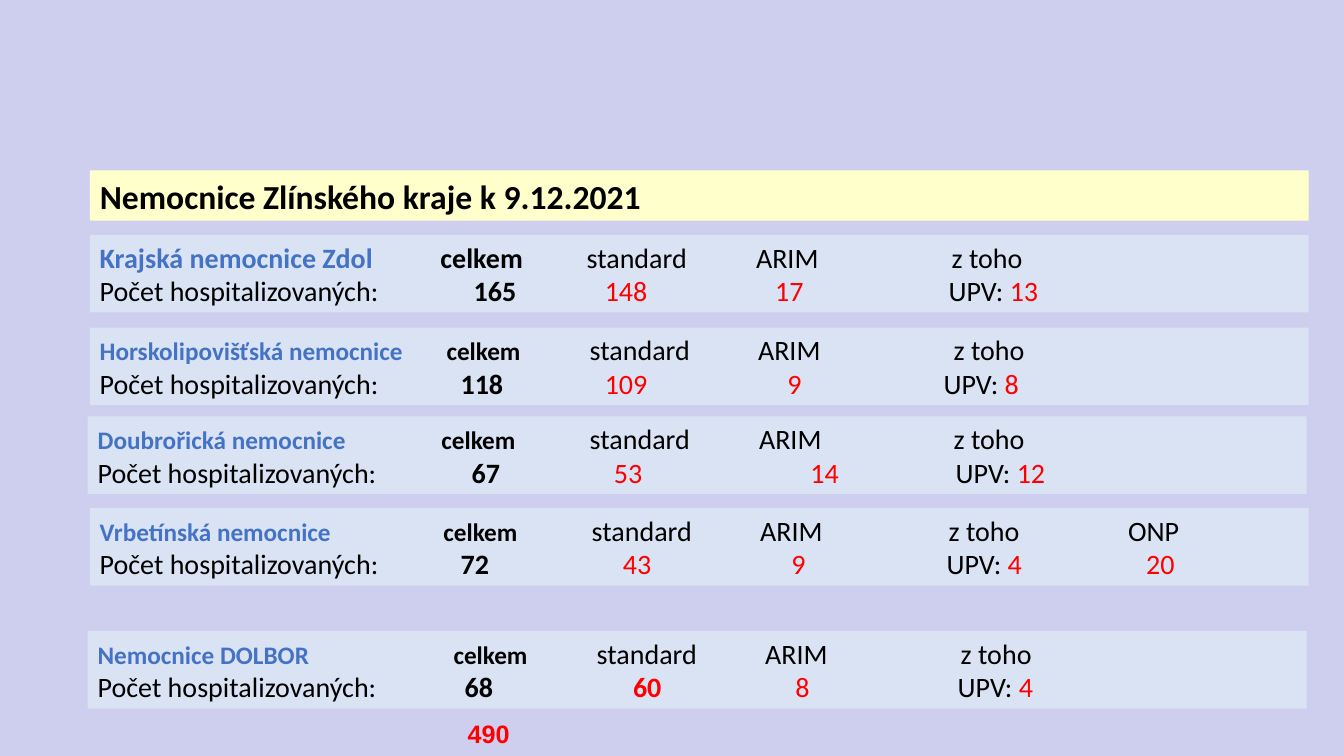
from lxml import etree
from pptx import Presentation
from pptx.dml.color import RGBColor
from pptx.enum.shapes import MSO_SHAPE
from pptx.enum.text import MSO_ANCHOR, PP_ALIGN
from pptx.oxml.ns import qn
from pptx.util import Inches, Pt

RECTANGLE = MSO_SHAPE.RECTANGLE
MIDDLE = MSO_ANCHOR.MIDDLE
LEFT = PP_ALIGN.LEFT
BLACK, RED, BLUE = "000000", "FF0000", "4472C4"
BACKGROUND, TITLE_FILL, BAND_FILL = "CECEEF", "FFFFCC", "DAE3F3"
BAND_WIDTH, BAND_HEIGHT, INSET = 12.09, 0.77, 0.1


def color(value):
    return RGBColor.from_string(value)


def add_run(paragraph, text, size, text_color, bold=False, font="Calibri"):
    run = paragraph.add_run()
    run.text = text
    run.font.name = font
    run.font.size = Pt(size)
    run.font.bold = bold
    run.font.color.rgb = color(text_color)


presentation = Presentation()
presentation.slide_width = Inches(13.33)
presentation.slide_height = Inches(7.5)
slide = presentation.slides.add_slide(presentation.slide_layouts[5])
slide.background.fill.solid()
slide.background.fill.fore_color.rgb = color(BACKGROUND)

# Title band
title = slide.shapes.title
title.left, title.top = Inches(0.89), Inches(1.69)
title.width, title.height = Inches(BAND_WIDTH), Inches(0.5)
title.fill.solid()
title.fill.fore_color.rgb = color(TITLE_FILL)
title.text_frame.vertical_anchor = MIDDLE
title.text_frame.paragraphs[0].alignment = LEFT
add_run(title.text_frame.paragraphs[0], "Nemocnice Zlínského kraje k 9.12.2021", 24, BLACK, True)

# Hospitals: name, name size, left, top, UPV count, bold standard count,
# then the columns as heading, heading position, count, count position
hospitals = [
    ("Krajská nemocnice Zdol", 20, 0.89, 2.33, "13", False, [
        ("celkem", 4.37, "165", 4.70), ("standard", 5.82, "148", 6.00),
        ("ARIM", 7.50, "17", 7.69), ("z toho", 9.44, "UPV: ", 9.41)]),
    ("Horskolipovišťská nemocnice", 18, 0.89, 3.25, "8", False, [
        ("celkem", 4.43, "118", 4.57), ("standard", 5.85, "109", 6.00),
        ("ARIM", 7.52, "9", 7.81), ("z toho", 9.46, "UPV: ", 9.36)]),
    ("Doubrořická nemocnice", 18, 0.87, 4.13, "12", False, [
        ("celkem", 4.38, "67", 4.68), ("standard", 5.85, "53", 6.09),
        ("ARIM", 7.53, "14", 8.04), ("z toho", 9.46, "UPV: ", 9.48)]),
    ("Vrbetínská nemocnice", 18, 0.89, 5.04, "4", False, [
        ("celkem", 4.40, "72", 4.57), ("standard", 5.87, "43", 6.18),
        ("ARIM", 7.54, "9", 7.85), ("z toho", 9.41, "UPV: ", 9.39),
        ("ONP", 11.19, "20", 11.37)]),
    ("Nemocnice DOLBOR", 18, 0.87, 6.26, "4", True, [
        ("celkem", 4.50, "68", 4.61), ("standard", 5.92, "60", 6.28),
        ("ARIM", 7.59, "8", 7.89), ("z toho", 9.53, "UPV: ", 9.50)]),
]

for name, name_size, left, top, upv, bold_standard, columns in hospitals:
    band = slide.shapes.add_shape(
        RECTANGLE, Inches(left), Inches(top), Inches(BAND_WIDTH), Inches(BAND_HEIGHT))
    band.shadow.inherit = False
    band.fill.solid()
    band.fill.fore_color.rgb = color(BAND_FILL)
    band.line.fill.background()
    frame = band.text_frame
    frame.word_wrap = True
    frame.vertical_anchor = MIDDLE
    headings, counts = frame.paragraphs[0], frame.add_paragraph()

    # Tab stops hold the columns of both lines
    for paragraph, position_index in ((headings, 1), (counts, 3)):
        paragraph.alignment = LEFT
        tab_list = etree.SubElement(paragraph._p.get_or_add_pPr(), qn("a:tabLst"))
        for column in columns:
            position = Inches(column[position_index] - left - INSET)
            etree.SubElement(tab_list, qn("a:tab"), pos=str(position), algn="l")

    add_run(headings, name, name_size, BLUE, True)
    add_run(counts, "Počet hospitalizovaných:", 20, BLACK)
    for heading, _, count, _ in columns:
        is_total = heading == "celkem"
        is_upv = heading == "z toho"
        is_bold = is_total or (heading == "standard" and bold_standard)
        add_run(headings, "\t" + heading, name_size if is_total else 20, BLACK, is_total)
        add_run(counts, "\t" + count, 20, BLACK if is_total or is_upv else RED, is_bold)
        if is_upv:
            add_run(counts, upv, 20, RED)

# Sum of all hospitals
total = slide.shapes.add_textbox(Inches(4.54), Inches(7.08), Inches(1.42), Inches(0.4))
total.text_frame.word_wrap = True
add_run(total.text_frame.paragraphs[0], "490", 18, RED, True, "Arial")

presentation.save("out.pptx")
